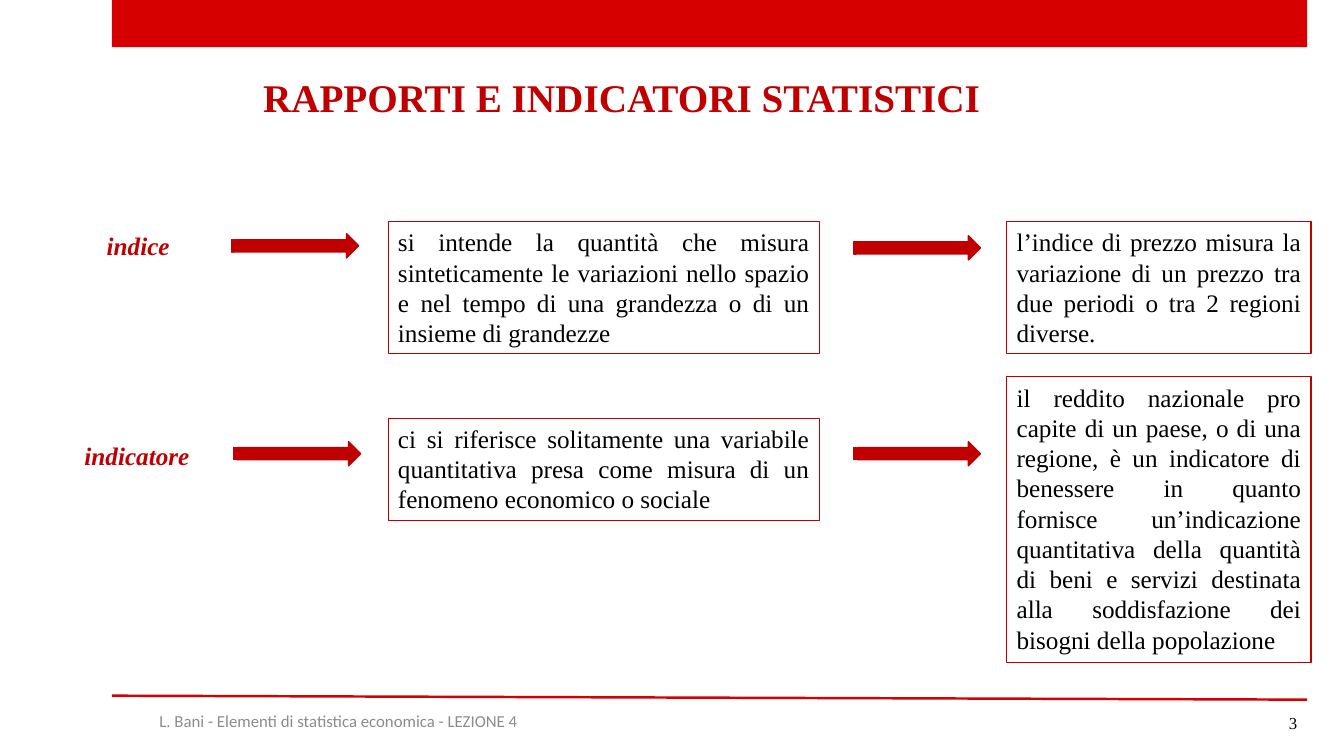
from dataclasses import dataclass

from lxml import etree
from pptx import Presentation
from pptx.dml.color import RGBColor
from pptx.enum.shapes import MSO_CONNECTOR, MSO_SHAPE
from pptx.enum.text import MSO_ANCHOR, PP_ALIGN
from pptx.oxml.ns import qn
from pptx.util import Cm, Pt

RECT, ARROW = MSO_SHAPE.RECTANGLE, MSO_SHAPE.STRIPED_RIGHT_ARROW
STRAIGHT = MSO_CONNECTOR.STRAIGHT
TOP, MIDDLE = MSO_ANCHOR.TOP, MSO_ANCHOR.MIDDLE
LEFT, CENTER = PP_ALIGN.LEFT, PP_ALIGN.CENTER
RIGHT, JUSTIFY = PP_ALIGN.RIGHT, PP_ALIGN.JUSTIFY

TITLE = "RAPPORTI E INDICATORI STATISTICI"
FOOTER = "L. Bani - Elementi di statistica economica - LEZIONE 4"
PAGE = "3"

# Boxes are left, top, width, height in cm; arrows are left, top.
CONCEPTS = [
    {
        "term": ("indice", (2.44, 5.69, 2.11, 1.02)),
        "arrows": [(5.84, 5.89), (21.51, 5.94)],
        "definition": ("si intende la quantità che misura sinteticamente le "
                       "variazioni nello spazio e nel tempo di una grandezza "
                       "o di un insieme di grandezze", 5.59, 3.33),
        "example": ("l’indice di prezzo misura la variazione di un prezzo tra "
                    "due periodi o tra 2 regioni diverse.", 5.59, 3.33),
    },
    {
        "term": ("indicatore", (1.88, 10.97, 3.33, 1.02)),
        "arrows": [(5.89, 11.13), (21.51, 11.13)],
        "definition": ("ci si riferisce solitamente una variabile quantitativa "
                       "presa come misura di un fenomeno economico o sociale",
                       10.54, 2.57),
        "example": ("il reddito nazionale pro capite di un paese, o di una "
                    "regione, è un indicatore di benessere in quanto fornisce "
                    "un’indicazione quantitativa della quantità di beni e "
                    "servizi destinata alla soddisfazione dei bisogni della "
                    "popolazione", 9.5, 7.19),
    },
]
COLUMNS = {"definition": (9.78, 10.87), "example": (25.37, 7.67)}
ARROW_SIZE = (3.2, 0.61)
BAND_LEFT, BAND_WIDTH = 2.82, 30.12


@dataclass(frozen=True)
class Theme:
    serif: str = "Times New Roman"
    sans: str = "Calibri"
    band: RGBColor = RGBColor(0xD6, 0, 0)
    accent: RGBColor = RGBColor(0xC0, 0, 0)
    ink: RGBColor = RGBColor(0, 0, 0)
    muted: RGBColor = RGBColor(0x8C, 0x8C, 0x8C)
    title: int = 28
    body: int = 18
    small: int = 12


THEME = Theme()


def write(sp, text, size, color, font=THEME.serif, align=LEFT, anchor=TOP,
          wrap=True, bold=False, italic=False):
    tf = sp.text_frame
    tf.word_wrap = wrap
    tf.vertical_anchor = anchor
    p = tf.paragraphs[0]
    p.text = text
    p.alignment = align
    p.font.name, p.font.size, p.font.color.rgb = font, Pt(size), color
    p.font.bold, p.font.italic = bold, italic


def add_text(s, box, text, size, color, **style):
    write(s.shapes.add_textbox(*map(Cm, box)), text, size, color, **style)


def add_shape(s, kind, box, fill=None, line=None, width=1):
    sp = s.shapes.add_shape(kind, *map(Cm, box))
    sp.shadow.inherit = False
    if fill is None:
        sp.fill.background()
    else:
        sp.fill.solid()
        sp.fill.fore_color.rgb = fill
    if line is None:
        sp.line.fill.background()
    else:
        sp.line.color.rgb = line
        sp.line.width = Pt(width)
    return sp


def add_frame(s):
    """Top band, footer rule, title, footer and page number."""
    add_shape(s, RECT, (BAND_LEFT, 0, BAND_WIDTH, 1.19), fill=THEME.band)
    rule = s.shapes.add_connector(STRAIGHT, Cm(BAND_LEFT), Cm(17.53),
                                  Cm(BAND_LEFT + BAND_WIDTH), Cm(17.63))
    rule.line.color.rgb = THEME.band
    rule.line.width = Pt(1.75)
    etree.SubElement(rule.element.spPr, qn("a:effectLst"))
    add_text(s, (6.38, 1.73, 18.77, 1.45), TITLE, THEME.title, THEME.accent,
             wrap=False, bold=True)
    add_text(s, (BAND_LEFT, 17.65, 11.43, 1.02), FOOTER, THEME.small,
             THEME.muted, font=THEME.sans, align=CENTER, anchor=MIDDLE)
    add_text(s, (25.32, 17.7, 7.62, 1.02), PAGE, THEME.small, THEME.ink,
             align=RIGHT, anchor=MIDDLE)


def add_concept(s, concept):
    term, box = concept["term"]
    add_text(s, box, term, THEME.body, THEME.accent, wrap=False,
             bold=True, italic=True)
    for corner in concept["arrows"]:
        add_shape(s, ARROW, corner + ARROW_SIZE, THEME.accent, THEME.accent)
    for column, (left, width) in COLUMNS.items():
        text, top, height = concept[column]
        sp = add_shape(s, RECT, (left, top, width, height),
                       line=THEME.accent, width=0.75)
        write(sp, text, THEME.body, THEME.ink, align=JUSTIFY)


def main():
    prs = Presentation()
    prs.slide_width, prs.slide_height = Cm(33.87), Cm(19.05)
    s = prs.slides.add_slide(prs.slide_layouts[6])
    add_frame(s)
    for concept in CONCEPTS:
        add_concept(s, concept)
    prs.save("out.pptx")


if __name__ == "__main__":
    main()
